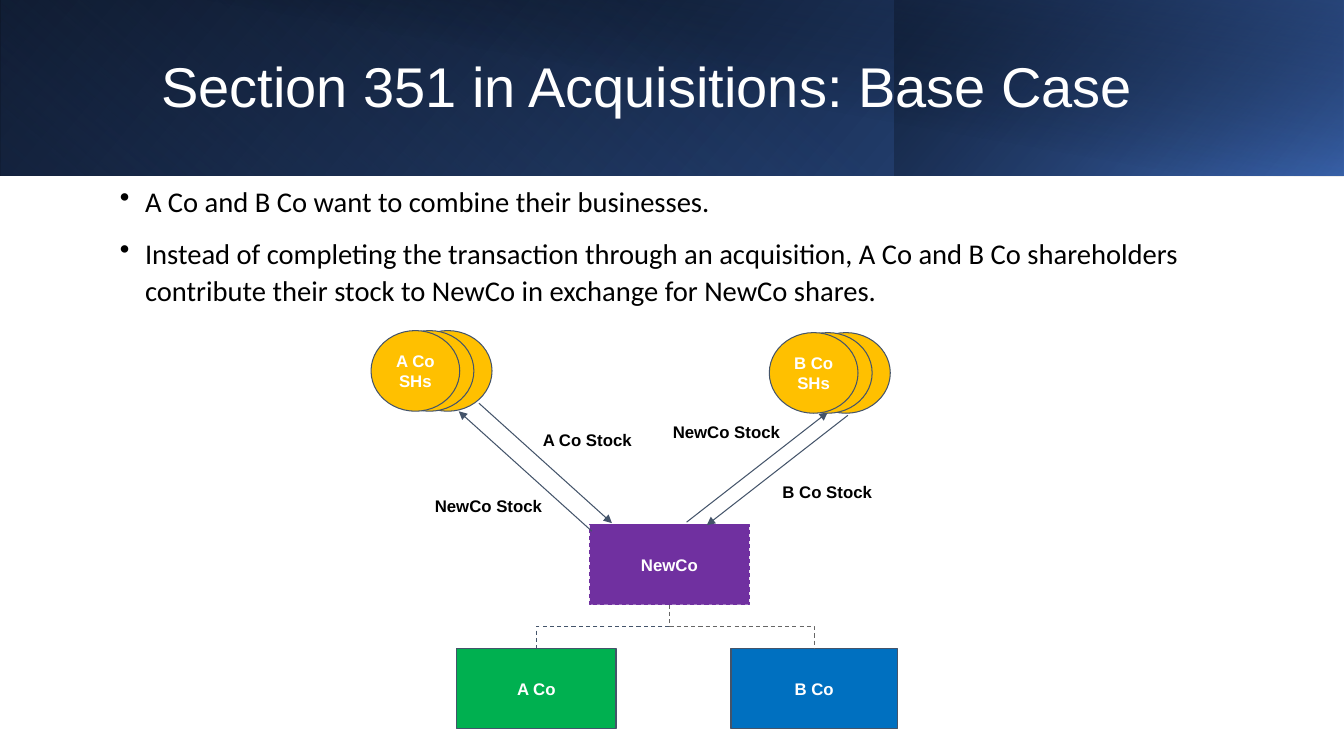
from lxml import etree
from pptx import Presentation
from pptx.dml.color import RGBColor
from pptx.enum.dml import MSO_LINE
from pptx.enum.shapes import MSO_CONNECTOR as Link, MSO_SHAPE as Form
from pptx.enum.text import MSO_ANCHOR as Anchor, PP_ALIGN as Align
from pptx.oxml.ns import qn
from pptx.util import Inches, Pt

WIDE, HIGH, BAND = 13.33, 7.5, 1.74
HEX = dict(white="FFFFFF", black="000000", ink="44546A", grey="666666",
           gold="FFC000", green="00B050", purple="7030A0", blue="0070C0",
           sky="4472C4", mid="2F5597", navy="203864")

TITLE = "Section 351 in Acquisitions: Base Case"
POINTS = [
    "A Co and B Co want to combine their businesses.",
    "Instead of completing the transaction through an acquisition, A Co and B Co "
    "shareholders contribute their stock to NewCo in exchange for NewCo shares.",
]
# left, width, height, turn, flip, angle, stops of (place, colour, opacity)
SHADES = [
    (0, WIDE, BAND, 0, True, 140, [(0, "black", 100), (100, "mid", 100)]),
    (0, 8.88, BAND, 180, True, 230, [(20, "sky", 0), (100, "navy", 55)]),
    (8.87, 4.46, BAND, 0, False, 220, [(0, "sky", 66), (100, "black", 30)]),
    (0.5, 12.83, 1.75, 0, False, 280, [(50, "black", 0), (99, "navy", 52)]),
]
BOX = 0.8
NEWCO = (5.85, 5.2, 1.58)
FIRMS = [("A Co", 4.53, 1.58, "green", "ink"), ("B Co", 7.25, 1.65, "blue", "grey")]
FIRM_TOP = 6.43
OWNERS = [("A Co SHs", 3.68, 3.28), ("B Co SHs", 7.63, 3.3)]
STACK = (0.32, 0.14, 0)
LABELS = [("A Co Stock", 5.1, 4.16), ("NewCo Stock", 4.12, 4.82),
          ("B Co Stock", 7.48, 4.68), ("NewCo Stock", 6.48, 4.08)]
# each arrow points at its second end
ARROWS = [((4.75, 4), (6.07, 5.19)), ((5.87, 5.27), (4.55, 4.08)),
          ((8.41, 4.12), (7.01, 5.21)), ((6.81, 5.18), (8.21, 4.09))]

deck = Presentation()
deck.slide_width, deck.slide_height = Inches(WIDE), Inches(HIGH)
slide = deck.slides.add_slide(deck.slide_layouts[6])
shapes = slide.shapes


def rgb(name):
    return RGBColor.from_string(HEX[name])


def sub(node, tag, **attrs):
    return etree.SubElement(node, qn(tag), {k: str(v) for k, v in attrs.items()})


def write(shape, lines, size, color, face="Arial", bold=False,
          align=Align.LEFT, anchor=Anchor.MIDDLE, inset=0.1):
    frame = shape.text_frame
    frame.word_wrap, frame.vertical_anchor = True, anchor
    frame.margin_left = frame.margin_right = Inches(0.1)
    frame.margin_top = frame.margin_bottom = Inches(inset)
    frame.text = "\n".join(lines)
    for para in frame.paragraphs:
        para.alignment = align
        font = para.font
        font.name, font.size, font.bold = face, Pt(size), bold
        font.color.rgb = rgb(color)
    return frame.paragraphs


def label(shape, text, color="white", anchor=Anchor.MIDDLE):
    write(shape, [text], 12, color, bold=True, align=Align.CENTER, anchor=anchor)


def text_box(x, y, w, h):
    return shapes.add_textbox(*map(Inches, (x, y, w, h)))


def node(form, x, y, w, h, fill, line="ink", text=""):
    shape = shapes.add_shape(form, *map(Inches, (x, y, w, h)))
    shape.shadow.inherit = False
    shape.fill.solid()
    shape.fill.fore_color.rgb = rgb(fill)
    shape.line.color.rgb, shape.line.width = rgb(line), Pt(0.75)
    if text:
        label(shape, text)
    return shape


def shade(x, w, h, turn, flip, angle, stops):
    """Add one see-through gradient layer of the header band."""
    shape = node(Form.RECTANGLE, x, 0, w, h, "navy")
    shape.line.fill.background()
    shape.rotation = turn
    props = shape.fill._xPr
    if flip:
        props.find(qn("a:xfrm")).set("flipH", "1")
    solid = props.find(qn("a:solidFill"))
    grad = etree.Element(qn("a:gradFill"), rotWithShape="1")
    chain = sub(grad, "a:gsLst")
    for place, color, alpha in stops:
        stop = sub(chain, "a:gs", pos=place * 1000)
        tint = sub(stop, "a:srgbClr", val=HEX[color])
        if alpha < 100:
            sub(tint, "a:alpha", val=alpha * 1000)
    sub(grad, "a:lin", ang=angle * 60000, scaled=0)
    props.replace(solid, grad)


def link(kind, start, end, color="ink"):
    line = shapes.add_connector(kind, *map(Inches, start + end))
    line.line.color.rgb, line.line.width = rgb(color), Pt(0.75)
    sub(line._element.spPr, "a:effectLst")
    return line


def branch(start, end, color):
    """Add a dashed elbow that leaves downwards: a sideways elbow, turned."""
    side = 1 if end[0] > start[0] else -1
    mid_x, mid_y = (start[0] + end[0]) / 2, (start[1] + end[1]) / 2
    half_w, half_h = (end[1] - start[1]) / 2, abs(end[0] - start[0]) / 2
    line = link(Link.ELBOW, (mid_x + side * half_w, mid_y - half_h),
                (mid_x - side * half_w, mid_y + half_h), color)
    turn = 270 if side > 0 else 90
    line._element.spPr.find(qn("a:xfrm")).set("rot", str(turn * 60000))
    line.line.dash_style = MSO_LINE.DASH


for layer in SHADES:
    shade(*layer)
title, = write(text_box(1.5, 0.32, 10.82, 1.13), [TITLE], 40, "white", inset=0.05)
title.line_spacing = 0.9

left, top, width = NEWCO
for name, x, w, fill, _ in FIRMS:
    node(Form.RECTANGLE, x, FIRM_TOP, w, BOX, fill, text=name)
newco = node(Form.RECTANGLE, left, top, width, BOX, "purple", "purple", "NewCo")
newco.line.dash_style = MSO_LINE.DASH
for _, x, w, _, color in FIRMS:
    branch((left + width / 2, top + BOX), (x + w / 2, FIRM_TOP), color)

for start, end in ARROWS:
    arrow = link(Link.STRAIGHT, start, end)
    sub(arrow.line._get_or_add_ln(), "a:tailEnd", type="triangle")
for text, x, y in LABELS:
    label(text_box(x, y, 1.45, 0.3), text, "black", Anchor.TOP)

body = text_box(1.09, BAND, 11.74, 1.41)
for para in write(body, POINTS, 20.4, "black", "Calibri", anchor=Anchor.TOP, inset=0.05):
    para.line_spacing, para.space_before = 1.1, Pt(10)
    props = para._p.get_or_add_pPr()
    props.set("marL", str(Inches(0.25)))
    props.set("indent", str(-Inches(0.25)))
    bullet = etree.Element(qn("a:buChar"), char="•")
    props.find(qn("a:defRPr")).addprevious(bullet)

for name, x, y in OWNERS:
    for shift in STACK:
        node(Form.FLOWCHART_CONNECTOR, x + shift, y, 0.88, BOX, "gold",
             text="" if shift else name)

deck.save("out.pptx")
